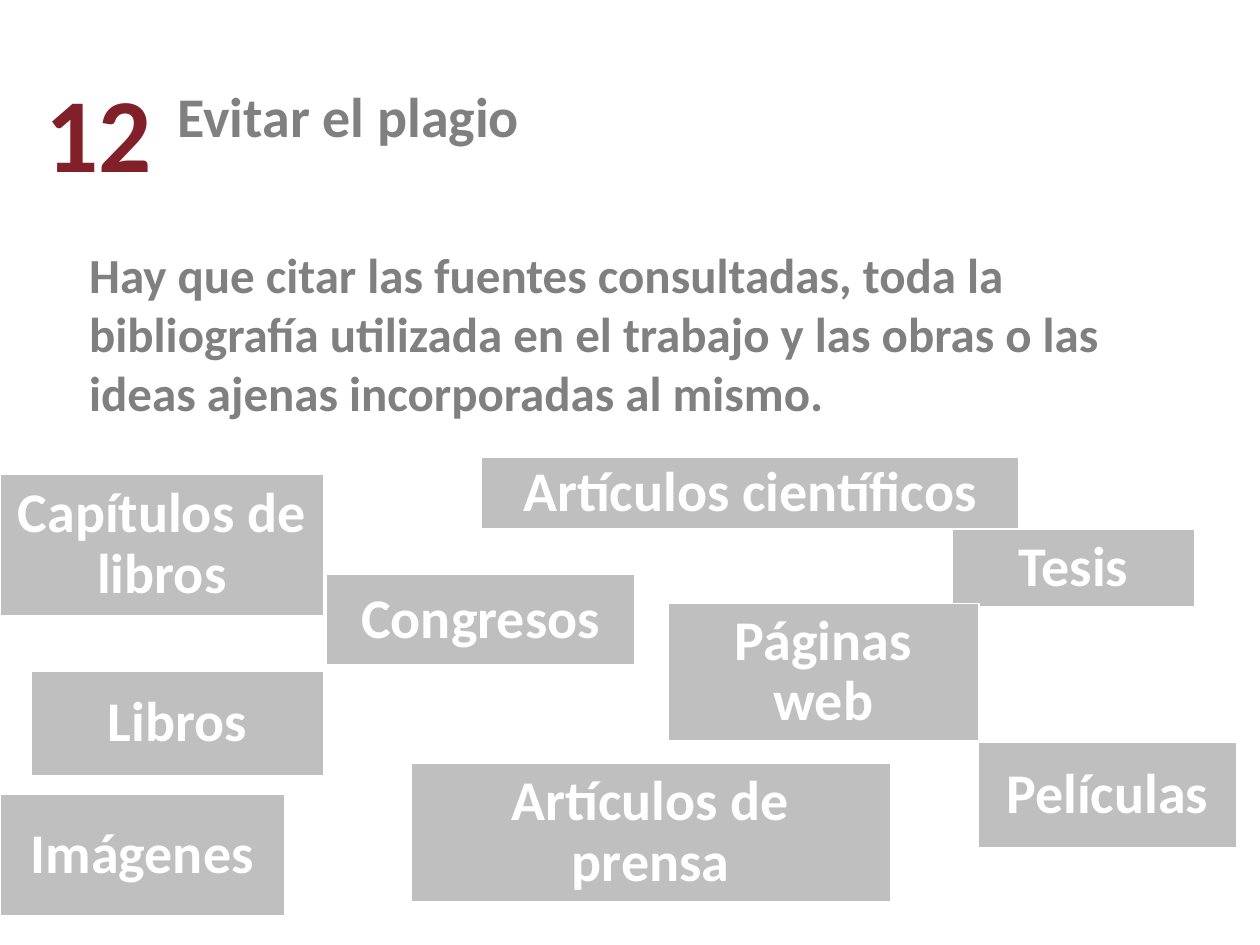
from pptx import Presentation
from pptx.dml.color import RGBColor
from pptx.enum.shapes import MSO_SHAPE
from pptx.enum.text import MSO_ANCHOR, PP_ALIGN
from pptx.util import Inches, Pt


def paint(hue):
    return RGBColor.from_string(hue)


def write(shape, text, size, hue, align):
    frame = shape.text_frame
    frame.word_wrap = True
    frame.text = text
    para = frame.paragraphs[0]
    para.alignment = align
    font = para.runs[0].font
    font.name = "Calibri"
    font.size = Pt(size)
    font.bold = True
    font.color.rgb = paint(hue)
    return frame, para


deck = Presentation()
deck.slide_width = Inches(10)
deck.slide_height = Inches(7.5)
slide = deck.slides.add_slide(deck.slide_layouts[6])

heads = [
    ("Evitar el plagio", 1.21, 0.6, 6.96, 0.64, 32, "808080", PP_ALIGN.JUSTIFY, 0.2, 0.05),
    ("12", 0.26, 0.49, 1.06, 1.11, 60, "822029", PP_ALIGN.LEFT, 0.1, 0.05),
    ("Hay que citar las fuentes consultadas, toda la bibliografía utilizada en el "
     "trabajo y las obras o las ideas ajenas incorporadas al mismo.",
     0.61, 1.21, 8.77, 3.03, 28, "808080", PP_ALIGN.LEFT, 0.1, 0.73),
]
for text, left, top, wide, high, size, hue, align, inset, drop in heads:
    box = slide.shapes.add_textbox(Inches(left), Inches(top), Inches(wide), Inches(high))
    frame, para = write(box, text, size, hue, align)
    frame.margin_left = Inches(inset)
    frame.margin_top = Inches(drop)

works = [
    ("Capítulos de libros", 0, 3.76, 2.57, 1.13, 0.13),
    ("Artículos científicos", 3.82, 3.63, 4.27, 0.57, 0.13),
    ("Tesis", 7.56, 4.2, 1.92, 0.62, 0.13),
    ("Libros", 0.25, 5.33, 2.32, 0.83, 0),
    ("Congresos", 2.59, 4.56, 2.45, 0.72, 0.13),
    ("Páginas web", 5.3, 4.79, 2.47, 1.09, 0.13),
    ("Películas", 7.76, 5.89, 2.06, 0.84, 0),
    ("Imágenes", 0, 6.3, 2.26, 0.97, 0),
    ("Artículos de prensa", 3.26, 6.06, 3.81, 1.1, 0.13),
]
for text, left, top, wide, high, inset in works:
    card = slide.shapes.add_shape(
        MSO_SHAPE.RECTANGLE, Inches(left), Inches(top), Inches(wide), Inches(high))
    card.shadow.inherit = False
    card.fill.solid()
    card.fill.fore_color.rgb = paint("BFBFBF")
    card.line.color.rgb = paint("FFFFFF")
    card.line.width = Pt(1)
    frame, para = write(card, text, 32, "FFFFFF", PP_ALIGN.CENTER)
    frame.vertical_anchor = MSO_ANCHOR.MIDDLE
    frame.margin_left = frame.margin_right = Inches(inset)
    frame.margin_top = frame.margin_bottom = Inches(0.13)
    para.line_spacing = 0.9

deck.save("out.pptx")
